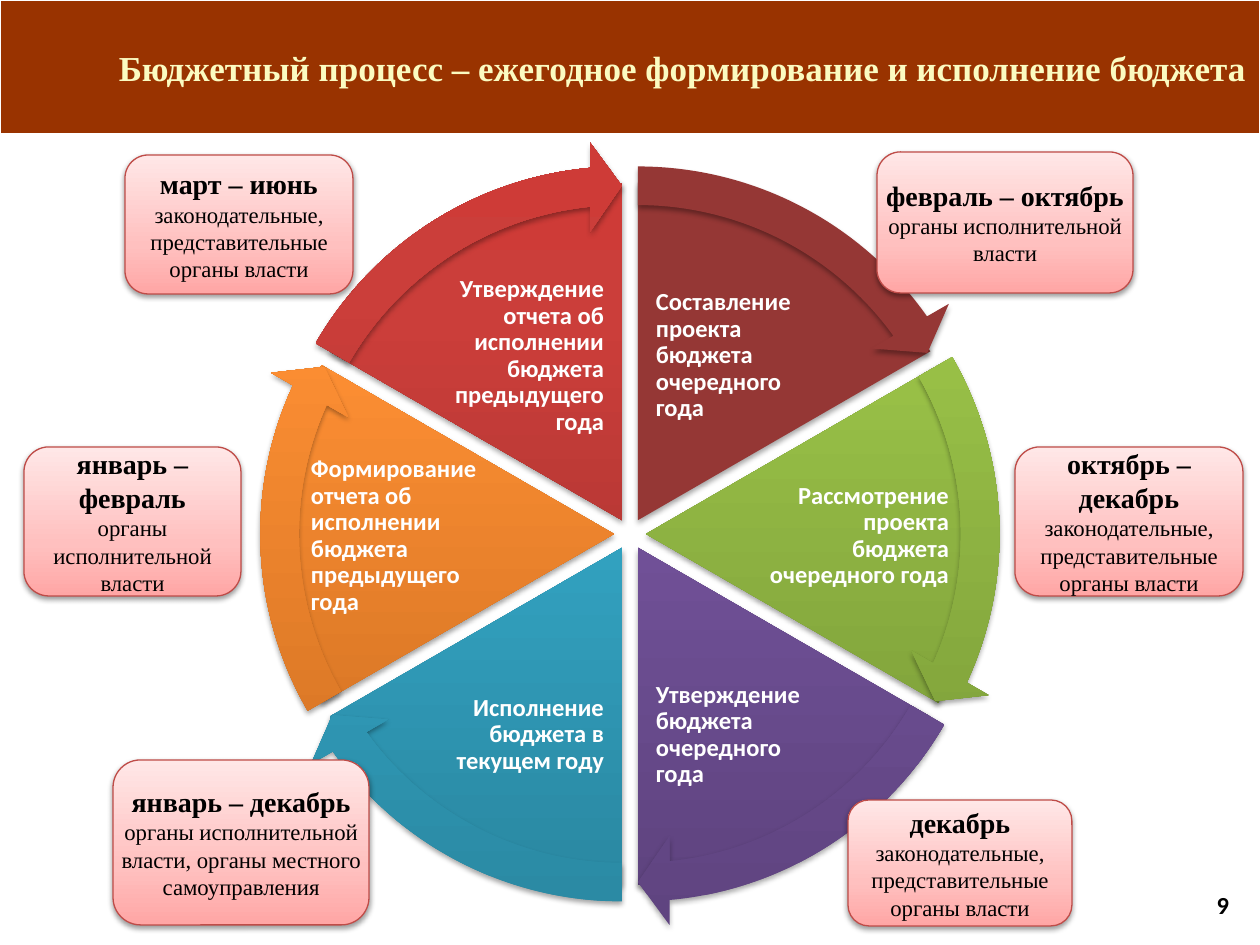
"""Build the slide on the yearly budget cycle: six stages and who is in charge of each."""
from math import cos, radians, sin

from lxml.etree import SubElement
from pptx import Presentation
from pptx.dml.color import RGBColor
from pptx.enum.shapes import MSO_SHAPE as SHAPE
from pptx.enum.text import MSO_ANCHOR as ANCHOR, PP_ALIGN as ALIGN
from pptx.oxml.ns import qn
from pptx.util import Emu, Pt

PX = 914400 // 126
SERIF, SANS = "Times New Roman", "Calibri"
COLORS = {"band": "993300", "title": "FBFBC1", "white": "FFFFFF", "black": "000000", "card_line": "BF4C48"}
CARD_STOPS = [(0, "FFA6A5"), (35, "FFC0BF"), (100, "FFE7E7")]

TITLE = "Бюджетный процесс – ежегодное формирование и исполнение бюджета"
PAGE = "9"
STAGES = [
    ("Составление проекта бюджета очередного года", (654, 288, 176, 136), ALIGN.LEFT,
     [(0, "953735")]),
    ("Рассмотрение проекта бюджета очередного года", (766, 470, 185, 132), ALIGN.RIGHT,
     [(0, "779737"), (80, "9BC348"), (100, "9DC746")]),
    ("Утверждение бюджета очередного года", (654, 667, 176, 136), ALIGN.LEFT,
     [(0, "5F4480"), (80, "7B58A6"), (100, "7C57A8")]),
    ("Исполнение бюджета в текущем году", (430, 667, 176, 136), ALIGN.RIGHT,
     [(0, "2A88A2"), (80, "37B1D2"), (100, "34B4D6")]),
    ("Формирование отчета об исполнении бюджета предыдущего года", (309, 470, 185, 132), ALIGN.LEFT,
     [(0, "CC6E20"), (80, "FF9034"), (100, "FF9136")]),
    ("Утверждение отчета об исполнении бюджета предыдущего года", (430, 288, 176, 136), ALIGN.RIGHT,
     [(0, "9C2F2D"), (80, "CB3E3A"), (100, "CE3B37")]),
]
LEGISLATURE = "законодательные, представительные органы власти"
EXECUTIVE = "органы исполнительной власти"
CARDS = [
    ("март – июнь", LEGISLATURE, (125, 155, 228, 139)),
    ("февраль – октябрь", EXECUTIVE, (877, 152, 256, 141)),
    ("октябрь – декабрь", LEGISLATURE, (1015, 447, 228, 149)),
    ("декабрь", LEGISLATURE, (848, 800, 224, 126)),
    ("январь – декабрь", "органы исполнительной власти, органы местного самоуправления",
     (113, 760, 256, 165)),
    ("январь – февраль", EXECUTIVE, (24, 447, 217, 149)),
]
CENTER_X, CENTER_Y, SPREAD = 630, 534, 16
PIE_SIZE, ARROW_SIZE = 675, 758
TURN, STEP, START, HEAD = 216, 36, 162, 3.275


def px(*lengths):
    return [Emu(round(length * PX)) for length in lengths]


def write(frame, lines, font=SERIF, color="black", align=ALIGN.CENTER, spacing=None, inset=0):
    """Fill a text frame with lines of (text, size, bold)."""
    frame.word_wrap = True
    frame.vertical_anchor = ANCHOR.MIDDLE
    frame.margin_left = frame.margin_right = frame.margin_top = frame.margin_bottom = px(inset)[0]
    for index, (text, size, bold) in enumerate(lines):
        paragraph = frame.add_paragraph() if index else frame.paragraphs[0]
        paragraph.alignment = align
        if spacing:
            paragraph.line_spacing = spacing
        run = paragraph.add_run()
        run.text = text
        run.font.name, run.font.size, run.font.bold = font, Pt(size), bold
        run.font.color.rgb = RGBColor.from_string(COLORS[color])


def paint(shape, stops, line=None):
    """Fill a shape with one colour or a bottom-to-top gradient, and outline it."""
    if len(stops) == 1:
        shape.fill.solid()
        shape.fill.fore_color.rgb = RGBColor.from_string(stops[0][1])
    else:
        shape.fill.gradient()
        shape.fill.gradient_angle = 90
        stop_list = shape._element.spPr.find(".//" + qn("a:gsLst"))
        stop_list.clear()
        for position, color in stops:
            stop = SubElement(stop_list, qn("a:gs"), pos=str(position * 1000))
            SubElement(stop, qn("a:srgbClr"), val=color)
    if line:
        shape.line.color.rgb = RGBColor.from_string(COLORS[line])
        shape.line.width = Pt(0.75)
    else:
        shape.line.fill.background()
    shape.shadow.inherit = False


def cast_shadow(shape, opacity, distance):
    effects = shape._element.spPr.find(qn("a:effectLst"))
    shadow = SubElement(effects, qn("a:outerShdw"), blurRad=str(Pt(3.1)), dist=str(Pt(distance)),
                        dir="5400000", rotWithShape="0")
    color = SubElement(shadow, qn("a:srgbClr"), val=COLORS["black"])
    SubElement(color, qn("a:alpha"), val=str(opacity * 1000))


def add_segment(slide, index, kind, size, adjustments, stops):
    middle = radians(60 * index - 60)
    left = CENTER_X + SPREAD * cos(middle) - size / 2
    top = CENTER_Y + SPREAD * sin(middle) - size / 2
    segment = slide.shapes.add_shape(kind, *px(left, top, size, size))
    for place, value in enumerate(adjustments):
        segment.adjustments[place] = value
    paint(segment, stops)
    cast_shadow(segment, 35, 1.8)


def add_wheel(slide):
    for index, (label, box, align, stops) in enumerate(STAGES):
        start = (START + STEP * index) % TURN
        add_segment(slide, index, SHAPE.PIE, PIE_SIZE, (start, (start + STEP) % TURN), stops)
        write(slide.shapes.add_textbox(*px(*box)).text_frame, [(label, 14, True)],
              font=SANS, color="white", align=align, spacing=0.9, inset=2)
    for index, (_, _, _, stops) in enumerate(STAGES):
        start = (START + STEP * index) % TURN
        tip = (start + STEP - HEAD) % TURN
        add_segment(slide, index, SHAPE.CIRCULAR_ARROW, ARROW_SIZE,
                    (0.051, HEAD, tip, start, 0.059), stops)


def main():
    deck = Presentation()
    deck.slide_width, deck.slide_height = px(1260, 945)
    slide = deck.slides.add_slide(deck.slide_layouts[5])

    title = slide.shapes.title
    band = slide.shapes.add_shape(SHAPE.RECTANGLE, *px(0, 0, 1260, 134))
    paint(band, [(0, COLORS["band"])], line="white")
    title._element.addprevious(band._element)
    title.left, title.top, title.width, title.height = px(105, 0, 1155, 134)
    write(title.text_frame, [(TITLE, 20, True)], color="title")

    add_wheel(slide)
    for period, body, box in CARDS:
        card = slide.shapes.add_shape(SHAPE.ROUNDED_RECTANGLE, *px(*box))
        paint(card, CARD_STOPS, line="card_line")
        cast_shadow(card, 38, 1.6)
        write(card.text_frame, [(period, 16, True), (body, 13, False)])

    page = slide.shapes.add_textbox(*px(1096, 880, 145, 50))
    write(page.text_frame, [(PAGE, 14, True)], font=SANS, align=ALIGN.RIGHT, inset=12)
    deck.save("out.pptx")


if __name__ == "__main__":
    main()
